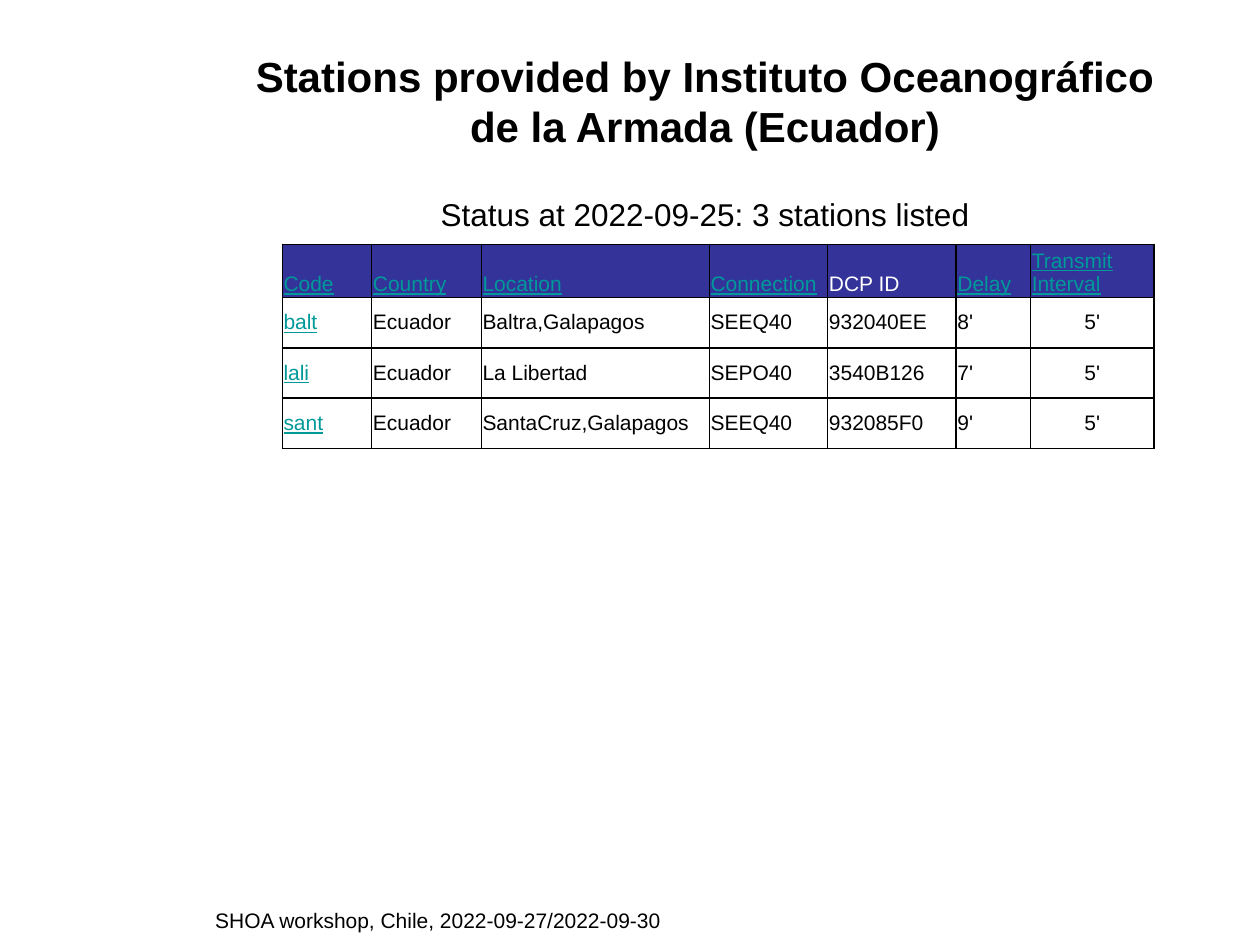
import dataclasses

import lxml.etree
import pptx
import pptx.dml.color
import pptx.enum.text
import pptx.oxml.ns
import pptx.util

Inches = pptx.util.Inches
Pt = pptx.util.Pt
Align = pptx.enum.text.PP_ALIGN
Anchor = pptx.enum.text.MSO_ANCHOR


@dataclasses.dataclass(frozen=True)
class Theme:
    """Fonts, type sizes and colours of the slide."""
    font: str = "Arial"
    title: int = 24
    status: int = 18
    body: int = 12
    ink: str = "000000"
    paper: str = "FFFFFF"
    link: str = "009999"
    header: str = "333399"


THEME = Theme()
HEADERS = ["Code", "Country", "Location", "Connection", "DCP ID", "Delay", "Transmit\nInterval"]
STATIONS = [
    ["balt", "Ecuador", "Baltra,Galapagos", "SEEQ40", "932040EE", "8'", "5'"],
    ["lali", "Ecuador", "La Libertad", "SEPO40", "3540B126", "7'", "5'"],
    ["sant", "Ecuador", "SantaCruz,Galapagos", "SEEQ40", "932085F0", "9'", "5'"],
]
COLUMN_WIDTHS = [0.71, 0.87, 1.81, 0.94, 1.02, 0.59, 0.98]
ROW_HEIGHTS = [0.41, 0.4, 0.4, 0.4]


def rgb(code):
    """Return the colour for a hex code."""
    return pptx.dml.color.RGBColor.from_string(code)


def write(paragraph, text, size, color=THEME.ink, bold=False, underline=False):
    """Add text to a paragraph, with a line break at each newline."""
    for number, line in enumerate(text.split("\n")):
        if number:
            paragraph.add_line_break()
        run = paragraph.add_run()
        run.text = line
        run.font.name = THEME.font
        run.font.size = Pt(size)
        run.font.bold = bold
        run.font.underline = underline
        run.font.color.rgb = rgb(color)


def add_heading(slide, left, top, width, height):
    """Place the centred title with the status line below it."""
    frame = slide.shapes.add_textbox(left, top, width, height).text_frame
    frame.word_wrap = True
    frame.vertical_anchor = Anchor.TOP
    frame.margin_top = Inches(0.1)
    frame.margin_left = frame.margin_right = Inches(0.15)
    title = frame.paragraphs[0]
    status = frame.add_paragraph()
    title.alignment = status.alignment = Align.CENTER
    status.space_before = Pt(25)
    write(title, "Stations provided by Instituto Oceanográfico de la Armada (Ecuador)",
          THEME.title, bold=True)
    write(status, "Status at 2022-09-25: 3 stations listed", THEME.status)


def add_borders(cell):
    """Draw a thin line on all four sides of a cell."""
    properties = cell._tc.get_or_add_tcPr()
    qn = pptx.oxml.ns.qn
    for position, side in enumerate(("a:lnL", "a:lnR", "a:lnT", "a:lnB")):
        line = lxml.etree.Element(qn(side), w=str(Pt(1)))
        fill = lxml.etree.SubElement(line, qn("a:solidFill"))
        lxml.etree.SubElement(fill, qn("a:srgbClr"), val=THEME.ink)
        properties.insert(position, line)


def fill_cell(cell, text, is_header, column):
    """Write and style one cell by its row type and column."""
    cell.margin_left = cell.margin_right = Inches(0.01)
    cell.margin_top = cell.margin_bottom = Inches(0.01)
    cell.vertical_anchor = Anchor.BOTTOM if is_header else Anchor.MIDDLE
    heading = HEADERS[column]
    if is_header or heading == "Delay":
        cell.fill.solid()
        cell.fill.fore_color.rgb = rgb(THEME.header if is_header else THEME.paper)
    else:
        cell.fill.background()
    linked = heading != "DCP ID" if is_header else heading == "Code"
    plain = THEME.paper if is_header else THEME.ink
    paragraph = cell.text_frame.paragraphs[0]
    centred = not is_header and column == len(HEADERS) - 1
    paragraph.alignment = Align.CENTER if centred else Align.LEFT
    write(paragraph, text, THEME.body, THEME.link if linked else plain, underline=linked)
    add_borders(cell)


def add_stations(slide, left, top, width, height):
    """Place the table of stations."""
    rows = [HEADERS] + STATIONS
    table = slide.shapes.add_table(len(rows), len(HEADERS), left, top, width, height).table
    table.first_row = table.horz_banding = False
    for column, inches in zip(table.columns, COLUMN_WIDTHS):
        column.width = Inches(inches)
    for row, inches in zip(table.rows, ROW_HEIGHTS):
        row.height = Inches(inches)
    for row_number, texts in enumerate(rows):
        for column, text in enumerate(texts):
            fill_cell(table.cell(row_number, column), text, row_number == 0, column)


def add_footer(slide, left, top, width, height):
    """Place the workshop name and dates."""
    frame = slide.shapes.add_textbox(left, top, width, height).text_frame
    frame.word_wrap = False
    write(frame.paragraphs[0], "SHOA workshop, Chile, 2022-09-27/2022-09-30", THEME.body)


def main():
    """Build and save the slide."""
    deck = pptx.Presentation()
    deck.slide_width, deck.slide_height = Inches(10), Inches(7.5)
    slide = deck.slides.add_slide(deck.slide_layouts[6])
    add_footer(slide, Inches(1.61), Inches(7.15), Inches(3.76), Inches(0.3))
    add_heading(slide, Inches(1.69), Inches(0.3), Inches(7.81), Inches(1.64))
    add_stations(slide, Inches(2.24), Inches(1.94),
                 Inches(sum(COLUMN_WIDTHS)), Inches(sum(ROW_HEIGHTS)))
    deck.save("out.pptx")


if __name__ == "__main__":
    main()
